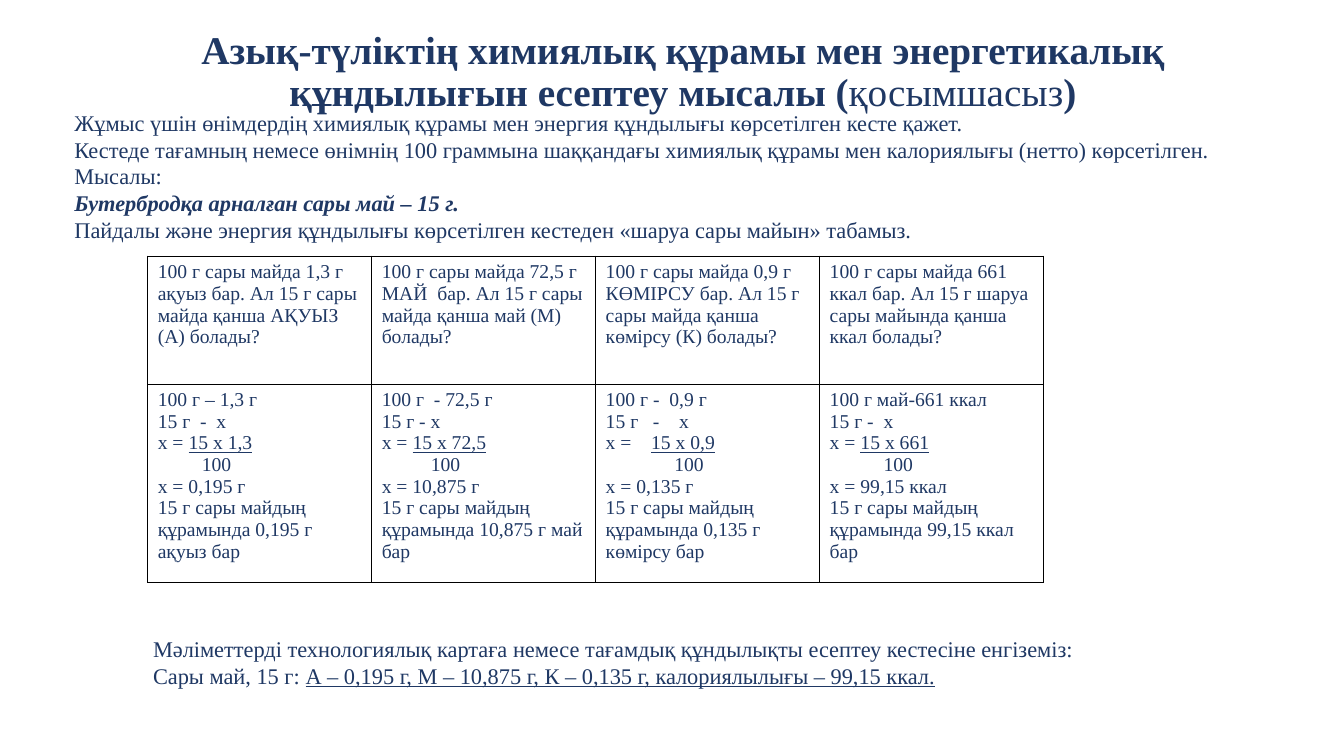
from dataclasses import dataclass

from lxml.etree import SubElement
from pptx import Presentation
from pptx.dml.color import RGBColor
from pptx.enum.text import MSO_ANCHOR, PP_ALIGN
from pptx.oxml.ns import qn
from pptx.util import Pt


@dataclass(frozen=True)
class Theme:
    font: str = "Times New Roman"
    ink: str = "1F3864"
    paper: str = "FFFFFF"
    border: str = "000000"
    title: int = 28
    body: int = 16
    cell: int = 14


@dataclass(frozen=True)
class Nutrient:
    question: str
    per_100: str
    portion: str
    amount: str
    result: str
    ending: str
    denominator_indent: float
    equals: str = "х = "
    portion_tabs: tuple = ()
    equals_tabs: tuple = ()


THEME = Theme()

NUTRIENTS = [
    Nutrient("100 г сары майда 1,3 г ақуыз бар. Ал 15 г сары майда қанша АҚУЫЗ (А) болады?",
             "100 г – 1,3 г", "15 г  -  х", "1,3", "0,195 г", "ақуыз бар", 31.5),
    Nutrient("100 г сары майда 72,5 г МАЙ  бар. Ал 15 г сары майда қанша май (М) болады?",
             "100 г  - 72,5 г", "15 г - х", "72,5", "10,875 г", "май бар", 35),
    Nutrient("100 г сары майда 0,9 г КӨМІРСУ бар. Ал 15 г сары майда қанша көмірсу (К) болады?",
             "100 г -  0,9 г", "15 г\t-\tх", "0,9", "0,135 г", "көмірсу бар", 49,
             "х =\t", (33.7, 52.4), (32.4,)),
    Nutrient("100 г сары майда 661 ккал бар. Ал 15 г шаруа сары майында қанша ккал болады?",
             "100 г май-661 ккал", "15 г -  х", "661", "99,15 ккал", "бар", 38.5),
]


def add_text(p, text, size=THEME.body, bold=False, italic=False, underline=False):
    r = p.add_run()
    r.text = text
    f = r.font
    f.name, f.size = THEME.font, Pt(size)
    f.bold, f.italic, f.underline = bold, italic, underline
    f.color.rgb = RGBColor.from_string(THEME.ink)


def next_paragraph(tf, align=None, indent=0, tabs=()):
    first = tf.paragraphs[0]
    p = tf.add_paragraph() if first.runs else first
    p.alignment = align
    pPr = p._p.get_or_add_pPr()
    if indent:
        pPr.set("marL", str(Pt(indent)))
        pPr.set("indent", "0")
    if tabs:
        tab_list = SubElement(pPr, qn("a:tabLst"))
        for pos in tabs:
            SubElement(tab_list, qn("a:tab"), pos=str(Pt(pos)), algn="l")
    return p


def add_text_box(slide, left, top, width, height):
    tf = slide.shapes.add_textbox(Pt(left), Pt(top), Pt(width), Pt(height)).text_frame
    tf.word_wrap = True
    return tf


def style_cell(cell):
    cell.fill.solid()
    cell.fill.fore_color.rgb = RGBColor.from_string(THEME.paper)
    tcPr = cell._tc.get_or_add_tcPr()
    # Borders precede the fill in the cell properties
    for i, side in enumerate(("a:lnL", "a:lnR", "a:lnT", "a:lnB")):
        ln = SubElement(tcPr, qn(side), w=str(Pt(1)))
        fill = SubElement(ln, qn("a:solidFill"))
        SubElement(fill, qn("a:srgbClr"), val=THEME.border)
        tcPr.insert(i, ln)


def write_calculation(tf, n):
    add_text(next_paragraph(tf), n.per_100, THEME.cell)
    add_text(next_paragraph(tf, tabs=n.portion_tabs), n.portion, THEME.cell)
    p = next_paragraph(tf, tabs=n.equals_tabs)
    add_text(p, n.equals, THEME.cell)
    add_text(p, f"15 х {n.amount}", THEME.cell, underline=True)
    add_text(next_paragraph(tf, indent=n.denominator_indent), "100", THEME.cell)
    add_text(next_paragraph(tf), f"х = {n.result}", THEME.cell)
    add_text(next_paragraph(tf), f"15 г сары майдың құрамында {n.result} {n.ending}", THEME.cell)


def add_nutrient_table(slide, left, top, col_width, row_heights):
    cols = len(NUTRIENTS)
    table = slide.shapes.add_table(len(row_heights), cols, Pt(left), Pt(top),
                                   Pt(col_width * cols), Pt(sum(row_heights))).table
    table.first_row = table.horz_banding = False
    for row, height in zip(table.rows, row_heights):
        row.height = Pt(height)
    for i, n in enumerate(NUTRIENTS):
        table.columns[i].width = Pt(col_width)
        question, calculation = table.cell(0, i), table.cell(1, i)
        style_cell(question)
        style_cell(calculation)
        add_text(next_paragraph(question.text_frame), n.question, THEME.cell)
        write_calculation(calculation.text_frame, n)


def main():
    prs = Presentation()
    prs.slide_width, prs.slide_height = Pt(960), Pt(540)
    slide = prs.slides.add_slide(prs.slide_layouts[6])

    # Title
    tf = add_text_box(slide, 87.84, 18, 781.92, 67.68)
    tf.vertical_anchor = MSO_ANCHOR.MIDDLE
    p = next_paragraph(tf, PP_ALIGN.CENTER, indent=18)
    p.line_spacing = 0.9
    add_text(p, "Азық-түліктің химиялық құрамы мен энергетикалық құндылығын есептеу мысалы (",
             THEME.title, bold=True)
    add_text(p, "қосымшасыз", THEME.title)
    add_text(p, ")", THEME.title, bold=True)

    # Introduction
    tf = add_text_box(slide, 46.08, 74.16, 878.4, 159.84)
    for text, strong in [
        ("Жұмыс үшін өнімдердің химиялық құрамы мен энергия құндылығы көрсетілген кесте қажет.", False),
        ("Кестеде тағамның немесе өнімнің 100 граммына шаққандағы химиялық құрамы мен "
         "калориялығы (нетто) көрсетілген.", False),
        ("Мысалы:", False),
        ("Бутербродқа арналған сары май – 15 г.", True),
        ("Пайдалы және энергия құндылығы көрсетілген кестеден «шаруа сары майын» табамыз.", False),
    ]:
        add_text(next_paragraph(tf, PP_ALIGN.JUSTIFY), text, bold=strong, italic=strong)

    # Calculations
    add_nutrient_table(slide, 105.5, 183, 160, (91.4, 141.5))

    # Result
    tf = add_text_box(slide, 102.24, 450, 758.16, 67.68)
    add_text(next_paragraph(tf, PP_ALIGN.JUSTIFY),
             "Мәліметтерді технологиялық картаға немесе тағамдық құндылықты есептеу кестесіне енгіземіз:")
    p = next_paragraph(tf, PP_ALIGN.JUSTIFY)
    add_text(p, "Сары май, 15 г: ")
    add_text(p, "А – 0,195 г, М – 10,875 г, К – 0,135 г, калориялылығы – 99,15 ккал.", underline=True)

    prs.save("out.pptx")


if __name__ == "__main__":
    main()
